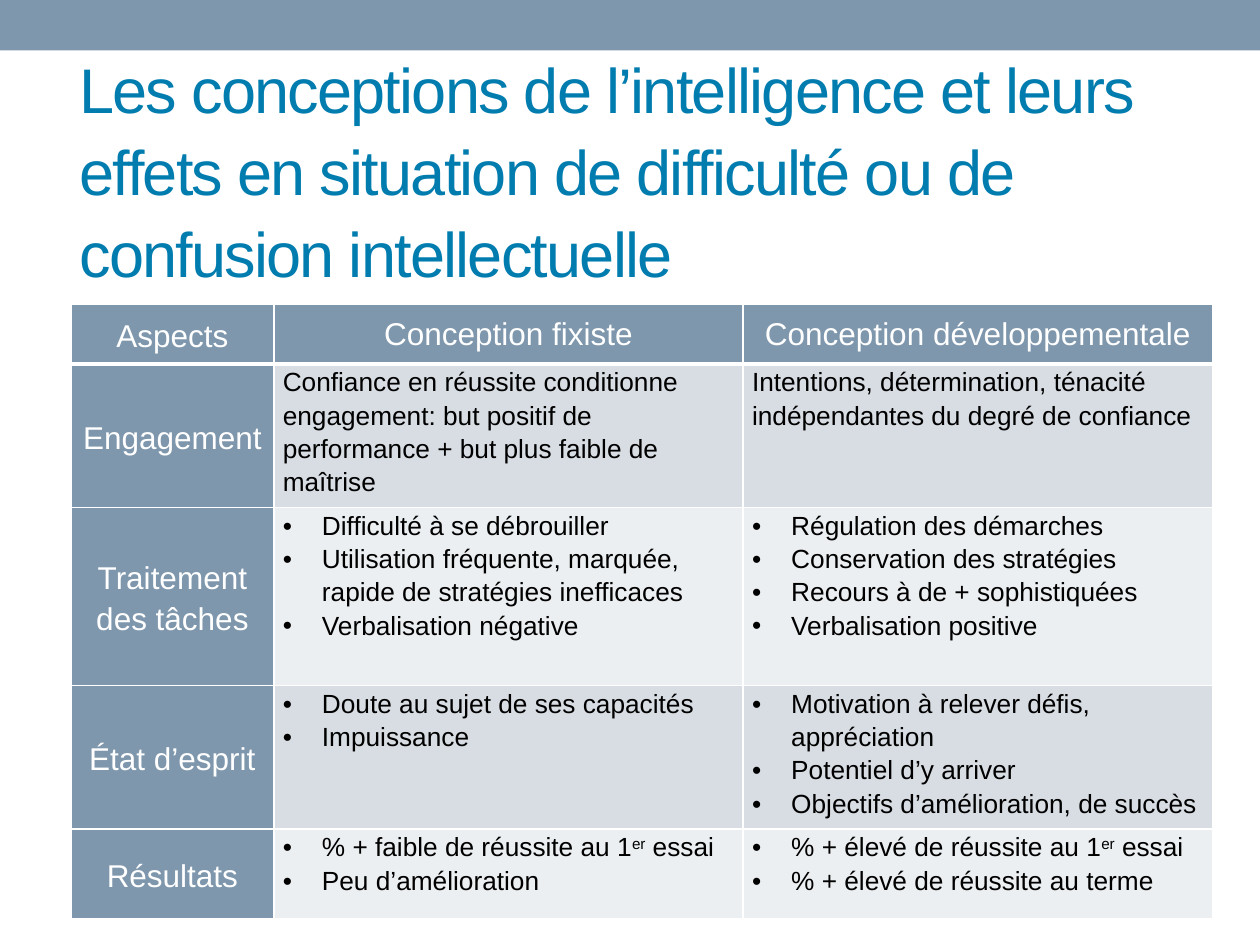
"""Build the slide comparing two conceptions of intelligence."""
from lxml import etree
from pptx import Presentation
from pptx import util as u
from pptx.dml.color import RGBColor
from pptx.enum import shapes, text
from pptx.oxml import ns

SLATE = RGBColor(0x7E, 0x97, 0xAD)
BLUE = RGBColor(0x00, 0x7C, 0xAF)
WHITE = RGBColor(0xFF, 0xFF, 0xFF)
BLACK = RGBColor(0x00, 0x00, 0x00)
BANDS = (RGBColor(0xD8, 0xDD, 0xE3), RGBColor(0xEC, 0xEF, 0xF1))

TITLE = ("Les conceptions de l’intelligence et leurs effets en situation "
         "de difficulté ou de confusion intellectuelle")
HEADINGS = ("Aspects", "Conception fixiste", "Conception développementale")
ASPECTS = [
    ("Engagement",
     "Confiance en réussite conditionne engagement: but positif de "
     "performance + but plus faible de maîtrise",
     "Intentions, détermination, ténacité indépendantes du degré de confiance"),
    ("Traitement des tâches",
     ["Difficulté à se débrouiller",
      "Utilisation fréquente, marquée, rapide de stratégies inefficaces",
      "Verbalisation négative"],
     ["Régulation des démarches", "Conservation des stratégies",
      "Recours à de + sophistiquées", "Verbalisation positive"]),
    ("État d’esprit",
     ["Doute au sujet de ses capacités", "Impuissance"],
     ["Motivation à relever défis, appréciation", "Potentiel d’y arriver",
      "Objectifs d’amélioration, de succès"]),
    ("Résultats",
     ["% + faible de réussite au 1^er^ essai", "Peu d’amélioration"],
     ["% + élevé de réussite au 1^er^ essai", "% + élevé de réussite au terme"]),
]
COLUMN_WIDTHS = (4.09, 9.46, 9.46)
ROW_HEIGHTS = (1.21, 2.7, 3.59, 2.7, 1.8)
LINE_SPACING = 1.14
BULLET_INDENT = u.Cm(0.79)

LABEL = {"size": u.Pt(18), "color": WHITE}
BODY = {"size": u.Pt(15), "color": BLACK}
HEADLINE = {"size": u.Pt(36), "color": BLUE}
TIGHT_MARGINS = {"margin_left": u.Cm(0.18), "margin_right": u.Cm(0.18),
                 "margin_top": 0, "margin_bottom": 0}
MIDDLE = {"vertical_anchor": text.MSO_ANCHOR.MIDDLE}


def apply(target, values):
    for name, value in values.items():
        setattr(target, name, value)


def write(paragraph, wording, style):
    for index, part in enumerate(wording.split("^")):
        run = paragraph.add_run()
        run.text = part
        apply(run.font, {"name": "Arial", "size": style["size"], "bold": False})
        run.font.color.rgb = style["color"]
        if index % 2:
            run.font._element.set("baseline", "30000")


def add_bullet(paragraph):
    properties = paragraph._p.get_or_add_pPr()
    properties.set("marL", str(BULLET_INDENT))
    properties.set("indent", str(-BULLET_INDENT))
    etree.SubElement(properties, ns.qn("a:buFont")).set("typeface", "Arial")
    etree.SubElement(properties, ns.qn("a:buChar")).set("char", "•")


def add_borders(cell, bottom_width):
    properties = cell._tc.get_or_add_tcPr()
    widths = {"lnL": 1, "lnR": 1, "lnT": 1, "lnB": bottom_width}
    for index, (side, width) in enumerate(widths.items()):
        border = etree.Element(ns.qn(f"a:{side}"), w=str(u.Pt(width)))
        fill = etree.SubElement(border, ns.qn("a:solidFill"))
        etree.SubElement(fill, ns.qn("a:srgbClr")).set("val", str(WHITE))
        properties.insert(index, border)


def fill_cell(cell, content, row, column):
    is_label = row == 0 or column == 0
    cell.fill.solid()
    cell.fill.fore_color.rgb = SLATE if is_label else BANDS[(row - 1) % 2]
    add_borders(cell, 3 if row == 0 else 1)
    apply(cell, MIDDLE if is_label else {})
    apply(cell, TIGHT_MARGINS if row else {})
    bulleted = isinstance(content, list)
    for index, line in enumerate(content if bulleted else [content]):
        frame = cell.text_frame
        paragraph = frame.add_paragraph() if index else frame.paragraphs[0]
        if row or column == 0:
            paragraph.line_spacing = LINE_SPACING
        if is_label:
            paragraph.alignment = text.PP_ALIGN.CENTER
        if bulleted:
            add_bullet(paragraph)
        write(paragraph, line, LABEL if is_label else BODY)


def main():
    deck = Presentation()
    apply(deck, {"slide_width": u.Cm(25.4), "slide_height": u.Cm(19.05)})
    slide = deck.slides.add_slide(deck.slide_layouts[6])

    band = slide.shapes.add_shape(shapes.MSO_SHAPE.RECTANGLE, 0, 0,
                                  deck.slide_width, u.Cm(1.02))
    band.shadow.inherit = False
    band.fill.solid()
    band.fill.fore_color.rgb = SLATE
    band.line.fill.background()

    title = slide.shapes.add_textbox(u.Cm(1.35), u.Cm(2.69), u.Cm(22.86), u.Cm(2.74))
    apply(title.text_frame, {"word_wrap": True, "margin_bottom": u.Cm(1.5), **MIDDLE})
    headline = title.text_frame.paragraphs[0]
    headline.line_spacing = 1.08
    write(headline, TITLE, HEADLINE)
    headline.runs[0].font._element.set("spc", "-100")

    rows = [HEADINGS, *ASPECTS]
    comparison = slide.shapes.add_table(
        len(rows), len(HEADINGS), u.Cm(1.43), u.Cm(6.13),
        u.Cm(sum(COLUMN_WIDTHS)), u.Cm(sum(ROW_HEIGHTS))).table
    apply(comparison, {"first_row": False, "horz_banding": False})
    for column, width in zip(comparison.columns, COLUMN_WIDTHS):
        column.width = u.Cm(width)
    for row, height in zip(comparison.rows, ROW_HEIGHTS):
        row.height = u.Cm(height)
    for row, contents in enumerate(rows):
        for column, content in enumerate(contents):
            fill_cell(comparison.cell(row, column), content, row, column)

    deck.save("out.pptx")


if __name__ == "__main__":
    main()
